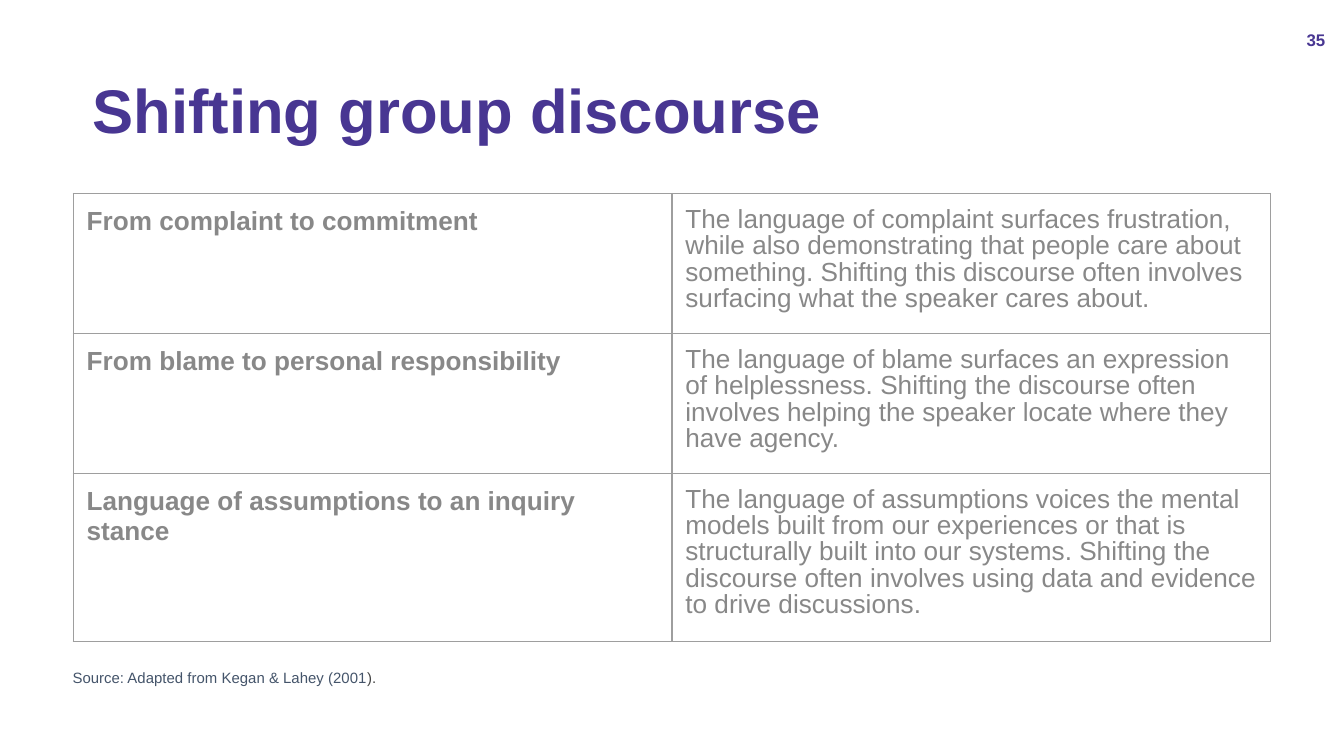
from lxml import etree
from pptx import Presentation
from pptx.dml.color import RGBColor
from pptx.enum.text import MSO_ANCHOR as Anchor, PP_ALIGN as Align
from pptx.oxml.ns import qn
from pptx.util import Inches, Pt

PURPLE = RGBColor(0x48, 0x36, 0x92)
GREY = RGBColor(0x88, 0x88, 0x88)
SLATE = RGBColor(0x44, 0x54, 0x6A)
DARK = RGBColor(0x43, 0x43, 0x43)
BORDER = RGBColor(0x9E, 0x9E, 0x9E)

SHIFTS = [
    ("From complaint to commitment",
     "The language of complaint surfaces frustration, while also demonstrating "
     "that people care about something. Shifting this discourse often involves "
     "surfacing what the speaker cares about."),
    ("From blame to personal responsibility",
     "The language of blame surfaces an expression of helplessness. Shifting "
     "the discourse often involves helping the speaker locate where they have "
     "agency."),
    ("Language of assumptions to an inquiry stance",
     "The language of assumptions voices the mental models built from our "
     "experiences or that is structurally built into our systems. Shifting the "
     "discourse often involves using data and evidence to drive discussions."),
]


def style(paragraph, size, color, bold=False, spacing=None):
    paragraph.line_spacing = spacing
    font = paragraph.font
    font.name, font.size, font.bold = "Arial", Pt(size), bold
    font.color.rgb = color


def add_text(left, top, width, height, text, inset_left=0, anchor=Anchor.MIDDLE):
    box = slide.shapes.add_textbox(Inches(left), Inches(top), Inches(width), Inches(height))
    frame = box.text_frame
    frame.word_wrap = True
    frame.vertical_anchor = anchor
    frame.margin_left, frame.margin_right = Inches(inset_left), Inches(0.07)
    frame.margin_top = frame.margin_bottom = Inches(0.04)
    frame.text = text
    return frame.paragraphs[0]


# 16:9 slide
prs = Presentation()
prs.slide_width = Inches(10)
prs.slide_height = prs.slide_width * 9 // 16
slide = prs.slides.add_slide(prs.slide_layouts[6])

# Title
title = add_text(0.69, 0.3, 8.62, 1.09, "Shifting group discourse")
style(title, 33, PURPLE, bold=True, spacing=0.9)

# Table of discourse shifts, centred; rows grow to fit their text
table_width, table_height = Inches(8.91), Inches(3.33)
table_frame = slide.shapes.add_table(
    len(SHIFTS), 2, (prs.slide_width - table_width) // 2, Inches(1.44),
    table_width, table_height)
table = table_frame.table
table.first_row = table.horz_banding = False

for row, shift in enumerate(SHIFTS):
    table.rows[row].height = Inches(0.42)
    for col, text in enumerate(shift):
        cell = table.cell(row, col)
        cell.text = text
        cell.margin_left = cell.margin_right = Inches(0.1)
        cell.margin_top = cell.margin_bottom = Inches(0.1)
        is_name = col == 0
        style(cell.text_frame.paragraphs[0], 14, GREY, bold=is_name,
              spacing=None if is_name else 0.9)
        # Cell borders come before the fill in the cell properties
        properties = cell._tc.get_or_add_tcPr()
        for side in ("a:lnL", "a:lnR", "a:lnT", "a:lnB"):
            line = etree.SubElement(properties, qn(side), w=str(Pt(0.75)))
            solid = etree.SubElement(line, qn("a:solidFill"))
            etree.SubElement(solid, qn("a:srgbClr"), val=str(BORDER))
        cell.fill.background()
table_frame.height = table_height

# Page number
page_number = add_text(9.51, 0.15, 0.42, 0.3, "35", inset_left=0.07)
page_number.alignment = Align.RIGHT
style(page_number, 9, PURPLE, bold=True)

# Source line
source = add_text(0.54, 4.95, 4.24, 0.51, "Source: Adapted from Kegan & Lahey (2001",
                  anchor=Anchor.TOP)
style(source, 8, SLATE, spacing=0.9)
closing = source.add_run()
closing.text = ")."
closing.font.color.rgb = DARK

prs.save("out.pptx")
